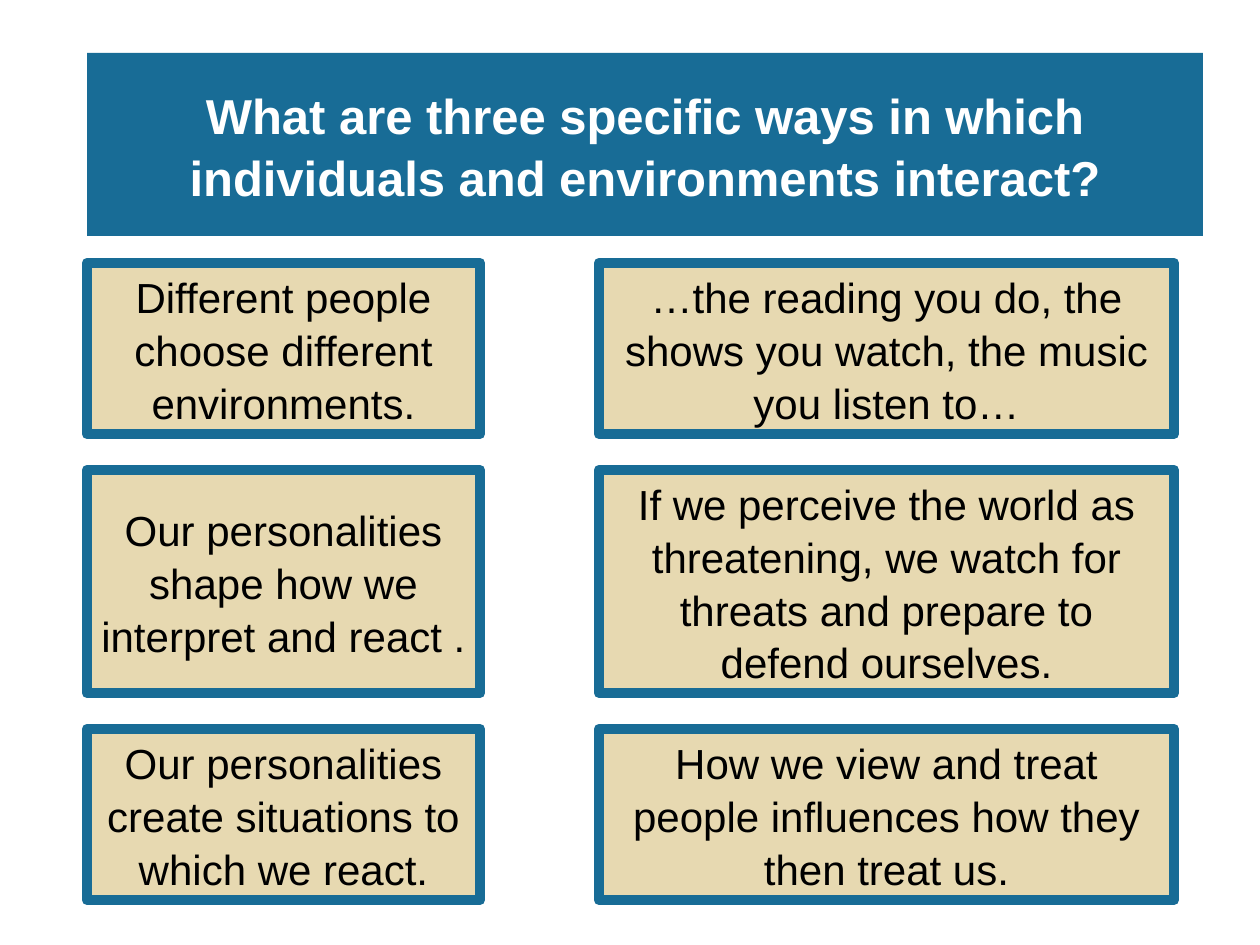
from dataclasses import dataclass

from pptx import Presentation
from pptx import util as u
from pptx.dml.color import RGBColor
from pptx.enum import shapes, text

TITLE = "What are three specific ways in which individuals and environments interact?"

# Each row: height, statement, example
ROWS = [
    (171, "Different people choose different environments.",
     "…the reading you do, the shows you watch, the music you listen to…"),
    (223, "Our personalities shape how we interpret and react .",
     "If we perceive the world as threatening, we watch for threats "
     "and prepare to defend ourselves."),
    (171, "Our personalities create situations to which we react.",
     "How we view and treat\npeople influences how they then treat us."),
]

PX = u.Inches(1) / 126
TITLE_BOX = (87, 53, 1116, 183)
COLUMNS = [(87, 393), (599, 575)]  # left, width
FIRST_TOP, ROW_GAP = 263, 36


@dataclass(frozen=True)
class Theme:
    font: str = "Arial"
    blue: RGBColor = RGBColor(0x18, 0x6C, 0x96)
    sand: RGBColor = RGBColor(0xE7, 0xD9, 0xB1)
    white: RGBColor = RGBColor(0xFF, 0xFF, 0xFF)
    black: RGBColor = RGBColor(0, 0, 0)
    title_size: int = 28
    body_size: int = 24
    border: int = 6
    spacing: float = 1.05


THEME = Theme()


def emu(*lengths):
    return [round(length * PX) for length in lengths]


def fill_box(box, fill, words, size, color, bold=False):
    box.fill.solid()
    box.fill.fore_color.rgb = fill
    frame = box.text_frame
    frame.text = words
    frame.word_wrap = True
    frame.auto_size = text.MSO_AUTO_SIZE.NONE
    frame.vertical_anchor = text.MSO_ANCHOR.MIDDLE
    for para in frame.paragraphs:
        para.alignment = text.PP_ALIGN.CENTER
        para.line_spacing = THEME.spacing
        for span in para.runs:
            span.font.name = THEME.font
            span.font.size = u.Pt(size)
            span.font.bold = bold
            span.font.color.rgb = color


def add_title(page):
    title = page.shapes.title
    title.left, title.top, title.width, title.height = emu(*TITLE_BOX)
    fill_box(title, THEME.blue, TITLE, THEME.title_size, THEME.white, bold=True)


def add_card(page, left, top, width, height, words):
    card = page.shapes.add_shape(
        shapes.MSO_SHAPE.RECTANGLE, *emu(left, top, width, height))
    card.shadow.inherit = False
    card.line.color.rgb = THEME.blue
    card.line.width = u.Pt(THEME.border)
    fill_box(card, THEME.sand, words, THEME.body_size, THEME.black)


def main():
    deck = Presentation()
    deck.slide_width, deck.slide_height = u.Inches(10), u.Inches(7.5)
    page = deck.slides.add_slide(deck.slide_layouts.get_by_name("Title Only"))
    add_title(page)
    top = FIRST_TOP
    for height, *cells in ROWS:
        for (left, width), words in zip(COLUMNS, cells):
            add_card(page, left, top, width, height, words)
        top += height + ROW_GAP
    deck.save("out.pptx")


if __name__ == "__main__":
    main()
